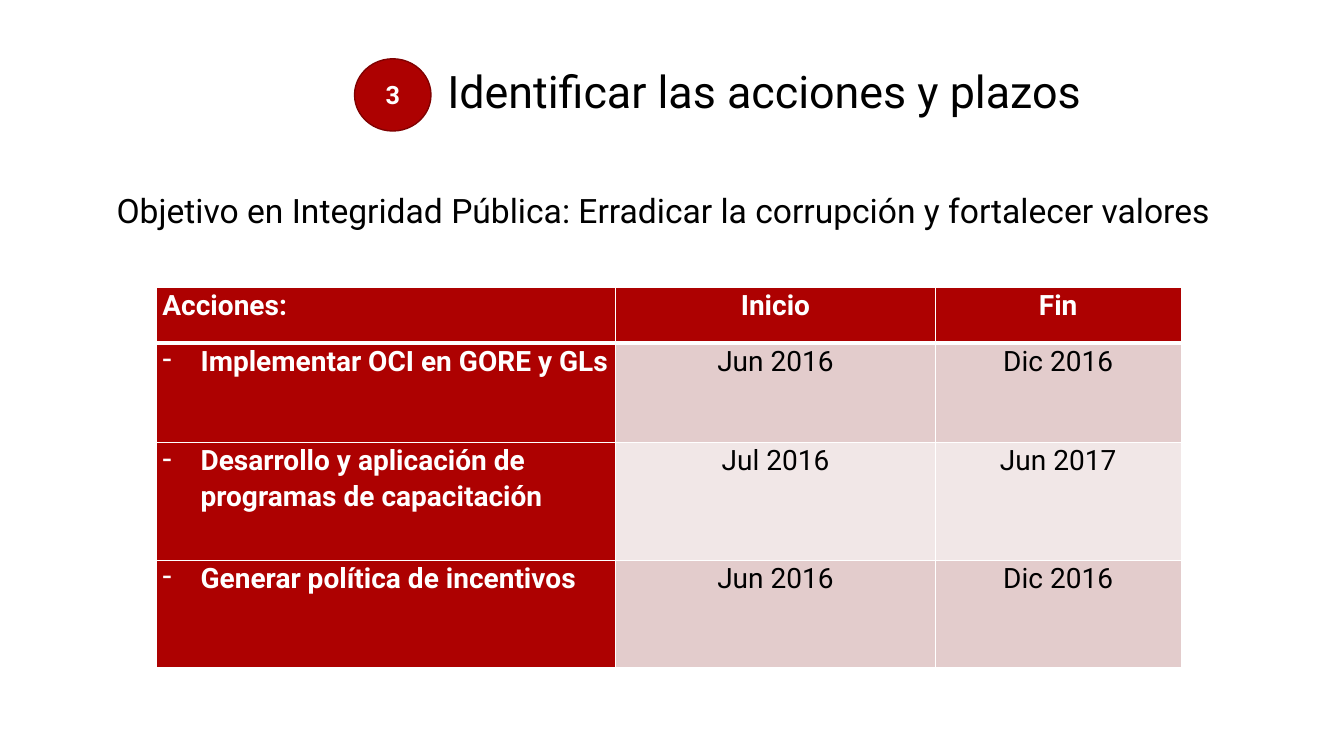
from lxml.etree import SubElement
from pptx import Presentation
from pptx.dml.color import RGBColor
from pptx.enum.shapes import MSO_SHAPE
from pptx.enum.text import MSO_ANCHOR, PP_ALIGN
from pptx.oxml import parse_xml
from pptx.oxml.ns import nsdecls, qn
from pptx.util import Inches, Pt

RED, DARK_RED = "AD0101", "800101"
WHITE, BLACK = "FFFFFF", "000000"
BANDS = ["E3CCCC", "F1E7E7"]


def color(hex_string):
    return RGBColor.from_string(hex_string)


class SlideBuilder:
    """Places elements on a grid of 160 columns by 90 rows."""

    font_name = "Roboto"
    unit = Inches(7.5) / 90

    def __init__(self, slide):
        self.slide = slide

    def grid(self, *lengths):
        return [round(length * self.unit) for length in lengths]

    def fill_text(self, frame, text, size, hex_color, bold=False,
                  align=PP_ALIGN.LEFT, spacing=None, bullet=None):
        frame.text = text
        paragraph = frame.paragraphs[0]
        paragraph.alignment = align
        if spacing:
            paragraph.line_spacing = spacing
        if bullet:
            properties = paragraph._p.get_or_add_pPr()
            indent = Inches(0.38)
            properties.set("marL", str(indent))
            properties.set("indent", str(-indent))
            SubElement(properties, qn("a:buChar")).set("char", bullet)
        font = paragraph.runs[0].font
        font.name, font.size, font.bold = self.font_name, Pt(size), bold
        font.color.rgb = color(hex_color)

    def text(self, box, text, size, wrap=True, anchor=MSO_ANCHOR.TOP, **style):
        frame = self.slide.shapes.add_textbox(*self.grid(*box)).text_frame
        frame.word_wrap = wrap
        frame.vertical_anchor = anchor
        self.fill_text(frame, text, size, BLACK, **style)

    def badge(self, box, text, size):
        shape = self.slide.shapes.add_shape(MSO_SHAPE.OVAL, *self.grid(*box))
        shape.shadow.inherit = False
        shape.fill.solid()
        shape.fill.fore_color.rgb = color(RED)
        shape.line.color.rgb = color(DARK_RED)
        shape.line.width = Pt(1)
        shape.text_frame.vertical_anchor = MSO_ANCHOR.MIDDLE
        self.fill_text(shape.text_frame, text, size, WHITE, bold=True,
                       align=PP_ALIGN.CENTER)

    def border(self, cell, side, width):
        line = parse_xml(
            f'<a:ln{side} {nsdecls("a")} w="{Pt(width)}"><a:solidFill>'
            f'<a:srgbClr val="{WHITE}"/></a:solidFill></a:ln{side}>')
        cell._tc.get_or_add_tcPr().append(line)

    def cell(self, cell, text, row, column):
        cell.margin_left = cell.margin_right = Inches(0.06)
        cell.margin_top = cell.margin_bottom = 0
        heading = row == 0 or column == 0
        # Borders come before the fill in the cell properties
        for side in "LRTB":
            thick = (side, row) in (("B", 0), ("T", 1))
            self.border(cell, side, 3 if thick else 1)
        cell.fill.solid()
        cell.fill.fore_color.rgb = color(RED if heading else BANDS[(row - 1) % 2])
        self.fill_text(cell.text_frame, text, 20, WHITE if heading else BLACK,
                       bold=heading, spacing=1.07,
                       align=PP_ALIGN.CENTER if column else PP_ALIGN.LEFT,
                       bullet="-" if row and not column else None)

    def table(self, left, top, widths, heights, rows):
        box = self.grid(left, top, sum(widths), sum(heights))
        table = self.slide.shapes.add_table(len(heights), len(widths), *box).table
        table.first_row = table.horz_banding = False
        for column, width in zip(table.columns, self.grid(*widths)):
            column.width = width
        for row, height in zip(table.rows, self.grid(*heights)):
            row.height = height
        for row, texts in enumerate(rows):
            for column, text in enumerate(texts):
                self.cell(table.cell(row, column), text, row, column)


def main():
    presentation = Presentation()
    presentation.slide_width = Inches(13.33)
    presentation.slide_height = Inches(7.5)
    builder = SlideBuilder(
        presentation.slides.add_slide(presentation.slide_layouts[6]))

    # Title with its step number
    builder.text((35, 2.5, 112, 17.4), "Identificar las acciones y plazos", 32,
                 anchor=MSO_ANCHOR.MIDDLE, align=PP_ALIGN.CENTER, spacing=0.9)
    builder.badge((42.2, 7, 9.1, 8.6), "3", 18)

    # Schedule of actions
    builder.table(18.6, 34.2, [54.7, 38, 29.3], [6.6, 11.9, 14, 12.8], [
        ["Acciones:", "Inicio", "Fin"],
        ["Implementar OCI en GORE y GLs", "Jun 2016", "Dic 2016"],
        ["Desarrollo y aplicación de programas de capacitación",
         "Jul 2016", "Jun 2017"],
        ["Generar política de incentivos", "Jun 2016", "Dic 2016"],
    ])

    # Objective
    builder.text((12.7, 21.7, 134.5, 6.1),
                 "Objetivo en Integridad Pública: "
                 "Erradicar la corrupción y fortalecer valores",
                 24, wrap=False, spacing=1.07)

    presentation.save("out.pptx")


if __name__ == "__main__":
    main()
